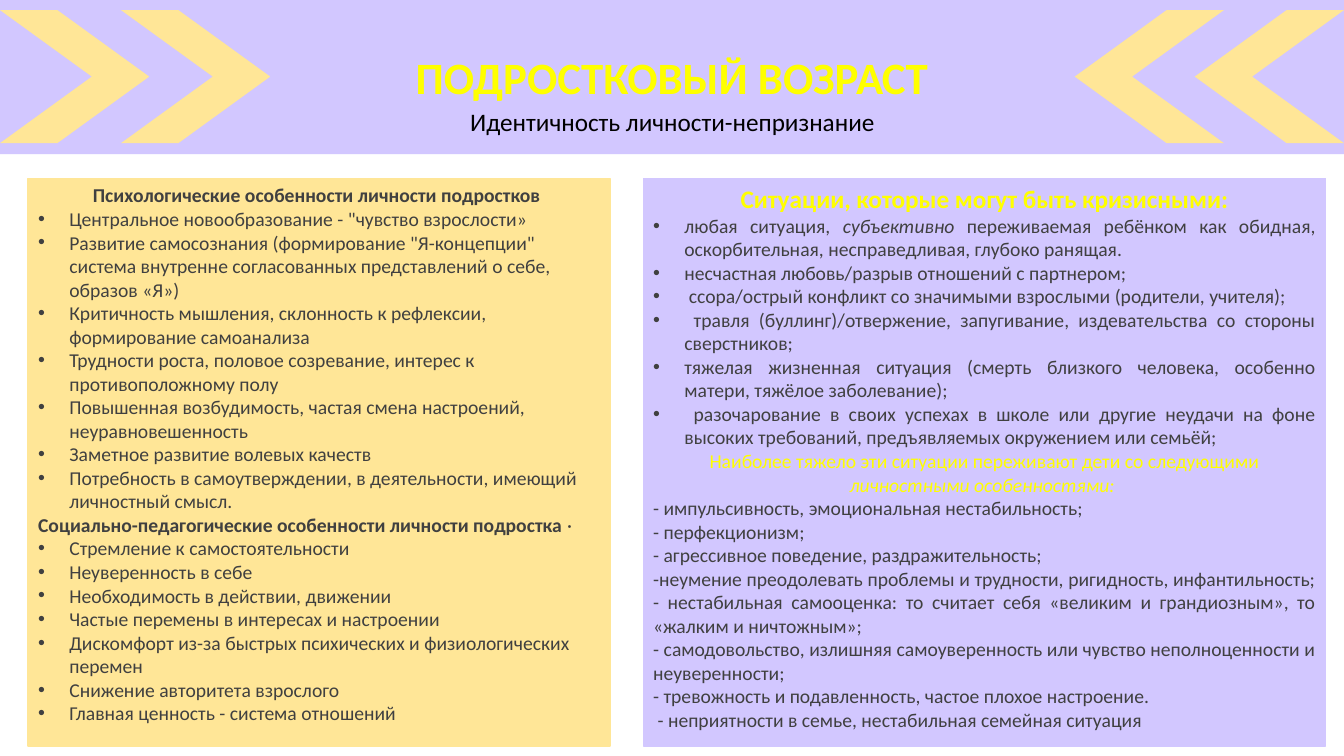
import pptx
import pptx.util
import pptx.dml.color
import pptx.enum.shapes
import pptx.enum.text
import pptx.oxml
from dataclasses import dataclass
from pptx.oxml.ns import qn

Inches = pptx.util.Inches
ALIGN = pptx.enum.text.PP_ALIGN
SHAPE = pptx.enum.shapes.MSO_SHAPE


@dataclass(frozen=True)
class Theme:
    font: str = "Calibri"
    violet: str = "B6A4FF"
    lilac: str = "D2C7FF"
    sand: str = "FFE697"
    yellow: str = "FFFF00"
    ink: str = "404040"
    black: str = "000000"
    title_size: int = 32
    heading_size: int = 18
    body_size: int = 14


class Page:
    """One slide together with the style it is drawn in."""

    def __init__(self, deck, theme):
        self.theme = theme
        self.slide = deck.slides.add_slide(deck.slide_layouts[5])

    def shape(self, preset, box, fill, line=None):
        shape = self.slide.shapes.add_shape(preset, *map(Inches, box))
        shape.shadow.inherit = False
        shape.fill.solid()
        shape.fill.fore_color.rgb = pptx.dml.color.RGBColor.from_string(fill)
        if line:
            shape.line.color.rgb = pptx.dml.color.RGBColor.from_string(line)
            shape.line.width = pptx.util.Pt(1)
        else:
            shape.line.fill.background()
        return shape

    def band(self, box, fill, opacity):
        band = self.shape(SHAPE.RECTANGLE, box, fill)
        color = band._element.spPr.find(qn("a:solidFill"))[0]
        color.append(color.makeelement(qn("a:alpha"), {"val": str(opacity * 1000)}))

    def chevron(self, left, flipped):
        chevron = self.shape(SHAPE.CHEVRON, (left, 0.1, 1.48, 1.32), self.theme.sand)
        chevron.adjustments[0] = 0.69
        if flipped:
            chevron._element.spPr.xfrm.set("flipH", "1")

    def style(self, para, size, color, bold=False, align=ALIGN.LEFT):
        para.alignment = align
        para.font.name = self.theme.font
        para.font.size = pptx.util.Pt(size)
        para.font.bold = bold
        para.font.color.rgb = pptx.dml.color.RGBColor.from_string(color)

    def caption(self, shape, box, text, size, color, bold=False):
        shape.left, shape.top, shape.width, shape.height = map(Inches, box)
        frame = shape.text_frame
        frame.word_wrap = True
        frame.auto_size = pptx.enum.text.MSO_AUTO_SIZE.SHAPE_TO_FIT_TEXT
        frame.vertical_anchor = pptx.enum.text.MSO_ANCHOR.TOP
        frame.text = text
        self.style(frame.paragraphs[0], size, color, bold, ALIGN.CENTER)

    def title(self, box, text):
        title = self.slide.shapes.title
        self.slide.shapes._spTree.append(title._element)  # above the band
        self.caption(title, box, text, self.theme.title_size, self.theme.yellow, True)

    def subtitle(self, box, text):
        label = self.slide.shapes.add_textbox(*map(Inches, box))
        self.caption(label, box, text, self.theme.heading_size, self.theme.black)

    def panel(self, box, fill):
        frame = self.shape(SHAPE.RECTANGLE, box, fill, fill).text_frame
        frame.word_wrap = True
        frame.vertical_anchor = pptx.enum.text.MSO_ANCHOR.TOP
        return frame

    def paragraph(self, frame, spans, size=None, color=None, bold=False, align=ALIGN.LEFT):
        """Add a paragraph; every second span is italic."""
        first = frame.paragraphs[0]
        para = frame.add_paragraph() if first.runs else first
        for index, text in enumerate(spans):
            span = para.add_run()
            span.text = text
            if index % 2:
                span.font.italic = True
        self.style(para, size or self.theme.body_size, color or self.theme.ink, bold, align)
        return para

    def bullets(self, frame, items, align=ALIGN.LEFT):
        for spans in items:
            properties = self.paragraph(frame, spans, align=align)._p.get_or_add_pPr()
            properties.set("marL", str(Inches(0.31)))
            properties.set("indent", str(-Inches(0.31)))
            bullet_parts = (("buFont", "typeface", "Arial"), ("buChar", "char", "•"))
            for position, (tag, name, value) in enumerate(bullet_parts):
                bullet = properties.makeelement(qn("a:" + tag), {name: value})
                properties.insert(position, bullet)


PSYCHOLOGY = [
    'Центральное новообразование - "чувство взрослости»',
    'Развитие самосознания (формирование "Я-концепции" система внутренне согласованных '
    'представлений о себе, образов «Я»)',
    "Критичность мышления, склонность к рефлексии, формирование самоанализа",
    "Трудности роста, половое созревание, интерес к противоположному полу",
    "Повышенная возбудимость, частая смена настроений, неуравновешенность",
    "Заметное развитие волевых качеств",
    "Потребность в самоутверждении, в деятельности, имеющий личностный смысл.",
]
SOCIAL = [
    "Стремление к самостоятельности",
    "Неуверенность в себе",
    "Необходимость в действии, движении",
    "Частые перемены в интересах и настроении",
    "Дискомфорт из-за быстрых психических и физиологических перемен",
    "Снижение авторитета взрослого",
    "Главная ценность - система отношений",
]
SITUATIONS = [
    ["любая ситуация, ", "субъективно ",
     "переживаемая ребёнком как обидная, оскорбительная, несправедливая, глубоко ранящая. "],
    ["несчастная любовь/разрыв отношений с партнером;"],
    [" ссора/острый конфликт со значимыми взрослыми (родители, учителя); "],
    [" травля (буллинг)/отвержение, запугивание, издевательства со стороны сверстников;"],
    ["тяжелая жизненная ситуация (смерть близкого человека, особенно матери, "
     "тяжёлое заболевание); "],
    [" разочарование в своих успехах в школе или другие неудачи на фоне высоких требований, "
     "предъявляемых окружением или семьёй; "],
]
TRAITS = [
    "- импульсивность, эмоциональная нестабильность; ",
    "- перфекционизм; ",
    "- агрессивное поведение, раздражительность; ",
    "-неумение преодолевать проблемы и трудности, ригидность, инфантильность; ",
    "- нестабильная самооценка: то считает себя «великим и грандиозным», то «жалким и ничтожным»; ",
    "- самодовольство, излишняя самоуверенность или чувство неполноценности и неуверенности; ",
    "- тревожность и подавленность, частое плохое настроение.",
    " - неприятности в семье, нестабильная семейная ситуация",
]


def main():
    deck = pptx.Presentation()
    deck.slide_width, deck.slide_height = Inches(13.33), Inches(7.5)
    theme = Theme()
    page = Page(deck, theme)

    # Header band with title and chevrons
    page.band((0, 0, 13.33, 1.53), theme.violet, 61)
    page.title((2.68, 0.44, 7.97, 0.64), "ПОДРОСТКОВЫЙ ВОЗРАСТ")
    for left, flipped in ((1.2, False), (0, False), (11.85, True), (10.66, True)):
        page.chevron(left, flipped)

    # Left panel: personality features
    features = page.panel((0.28, 1.77, 5.77, 5.63), theme.sand)
    page.paragraph(features, ["Психологические особенности личности подростков "],
                   bold=True, align=ALIGN.CENTER)
    page.bullets(features, [[item] for item in PSYCHOLOGY])
    social = page.paragraph(features, ["Социально-педагогические особенности личности подростка "],
                            bold=True, align=ALIGN.JUSTIFY)
    dot = social.add_run()
    dot.text = "·"
    dot.font.bold = False
    page.bullets(features, [[item] for item in SOCIAL])

    # Right panel: crisis situations
    crises = page.panel((6.38, 1.77, 6.77, 5.63), theme.lilac)
    page.paragraph(crises, ["Ситуации, которые могут быть кризисными:"],
                   theme.heading_size, theme.yellow, True, ALIGN.CENTER)
    page.bullets(crises, SITUATIONS, ALIGN.JUSTIFY)
    page.paragraph(crises, ["Наиболее тяжело эти ситуации переживают дети со следующими ",
                            "личностными особенностями: "],
                   color=theme.yellow, align=ALIGN.CENTER)
    for trait in TRAITS:
        page.paragraph(crises, [trait], align=ALIGN.JUSTIFY)

    # Subtitle
    page.subtitle((4.38, 1.01, 4.58, 0.4), "Идентичность личности-непризнание")

    deck.save("out.pptx")


if __name__ == "__main__":
    main()
